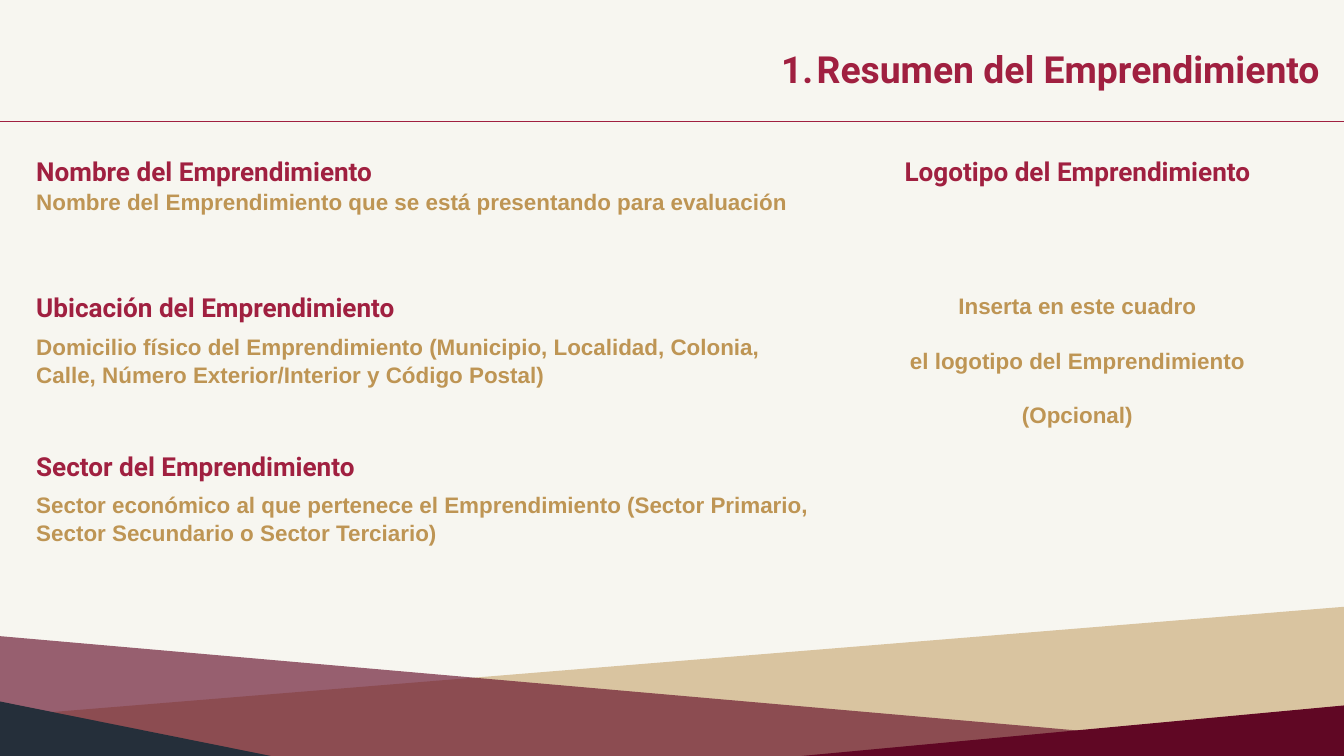
from lxml import etree
from pptx import Presentation
from pptx.dml.color import RGBColor
from pptx.enum.shapes import MSO_CONNECTOR
from pptx.enum.text import MSO_ANCHOR, PP_ALIGN
from pptx.oxml.ns import qn
from pptx.util import Cm, Pt

LEFT, CENTER, RIGHT = PP_ALIGN.LEFT, PP_ALIGN.CENTER, PP_ALIGN.RIGHT
TOP, MIDDLE = MSO_ANCHOR.TOP, MSO_ANCHOR.MIDDLE
STRAIGHT = MSO_CONNECTOR.STRAIGHT

CREAM = RGBColor(0xF7, 0xF6, 0xF0)
CRIMSON = RGBColor(0xA0, 0x20, 0x40)
GOLD = RGBColor(0xBE, 0x95, 0x54)
WINE = RGBColor(0x60, 0x07, 0x24)
NAVY = RGBColor(0x25, 0x2F, 0x3A)

SLIDE_WIDTH, SLIDE_HEIGHT = 50.8, 28.58
HEADING_WIDTH, HEADING_HEIGHT = 15.85, 1.24
HEADING = {"font": "Roboto", "size": 28, "color": CRIMSON}
BODY = {"font": "Arial", "size": 24, "color": GOLD}

FOOTER_HEIGHT = 5.64
# Fill, opacity in percent and corners in cm within the footer
RIBBONS = [
    (GOLD, 51, [(50.8, 0), (50.8, 5.3), (46.89, 5.64), (0, 5.64), (0, 4.14)]),
    (WINE, 100, [(30.3, 5.64), (50.8, 3.73), (50.8, 5.64)]),
    (WINE, 63, [(8.15, 5.64), (0, 4.92), (0, 1.11), (50.8, 5.56), (50.8, 5.64)]),
    (NAVY, 100, [(0, 5.64), (0, 3.58), (10.24, 5.64)]),
]

# Top of the field, offset and height of its description, heading, description
FIELDS = [
    (5.79, 1.25, 1.07, "Nombre del Emprendimiento",
     "Nombre del Emprendimiento que se está presentando para evaluación"),
    (10.92, 1.6, 2.08, "Ubicación del Emprendimiento",
     "Domicilio físico del Emprendimiento (Municipio, Localidad, Colonia, "
     "Calle, Número Exterior/Interior y Código Postal)"),
    (16.94, 1.55, 2.08, "Sector del Emprendimiento",
     "Sector económico al que pertenece el Emprendimiento (Sector Primario, "
     "Sector Secundario o Sector Terciario)"),
]


def add_text(slide, text, left, top, width, height, *, font, size, color,
             align=LEFT, anchor=TOP, gap=0):
    """Add bold text, one paragraph per line, with gap points between them."""
    box = slide.shapes.add_textbox(Cm(left), Cm(top), Cm(width), Cm(height))
    frame = box.text_frame
    frame.word_wrap = True
    frame.vertical_anchor = anchor
    frame.margin_left = frame.margin_right = frame.margin_bottom = 0
    frame.margin_top = Cm(0.04)
    frame.text = text
    for index, paragraph in enumerate(frame.paragraphs):
        paragraph.alignment = align
        paragraph.line_spacing = 1.04
        if index and gap:
            paragraph.space_before = Pt(gap)
        run_font = paragraph.runs[0].font
        run_font.name, run_font.size, run_font.bold = font, Pt(size), True
        run_font.color.rgb = color
    return box


def number_paragraph(paragraph, color):
    properties = paragraph._p.get_or_add_pPr()
    properties.set("marL", str(Cm(1.27)))
    properties.set("indent", str(Cm(-1.35)))
    bullet_color = etree.SubElement(properties, qn("a:buClr"))
    etree.SubElement(bullet_color, qn("a:srgbClr")).set("val", str(color))
    etree.SubElement(properties, qn("a:buAutoNum")).set("type", "arabicPeriod")


def add_footer(slide, left, top):
    for color, opacity, corners in RIBBONS:
        points = [(Cm(left + x), Cm(top + y)) for x, y in corners]
        builder = slide.shapes.build_freeform(*points[0])
        builder.add_line_segments(points[1:], close=True)
        ribbon = builder.convert_to_shape()
        ribbon.shadow.inherit = False
        ribbon.line.fill.background()
        ribbon.fill.solid()
        ribbon.fill.fore_color.rgb = color
        if opacity < 100:
            color_element = ribbon._element.spPr.find(
                f"{qn('a:solidFill')}/{qn('a:srgbClr')}")
            etree.SubElement(color_element, qn("a:alpha")).set("val", str(opacity * 1000))


def add_header(slide, left, top, width, height):
    title = add_text(slide, "Resumen del Emprendimiento", left + 22.5, top + 1.65,
                     27.38, 1.75, font="Roboto", size=40, color=CRIMSON, align=RIGHT)
    number_paragraph(title.text_frame.paragraphs[0], CRIMSON)
    bottom = Cm(top + height)
    rule = slide.shapes.add_connector(STRAIGHT, Cm(left), bottom, Cm(left + width), bottom)
    rule.line.color.rgb = CRIMSON
    rule.line.width = Pt(1)
    etree.SubElement(rule._element.spPr, qn("a:effectLst"))


def add_fields(slide, left, width):
    for top, offset, height, heading, description in FIELDS:
        add_text(slide, heading, left, top, HEADING_WIDTH, HEADING_HEIGHT, **HEADING)
        add_text(slide, description, left, top + offset, width, height, **BODY)


def add_logo_area(slide, left, top, width):
    add_text(slide, "Logotipo del Emprendimiento", left + (width - HEADING_WIDTH) / 2,
             top, HEADING_WIDTH, HEADING_HEIGHT, align=CENTER, **HEADING)
    add_text(slide, "Inserta en este cuadro\nel logotipo del Emprendimiento\n(Opcional)",
             left, top + 3.15, width, 9.27, align=CENTER, anchor=MIDDLE, gap=28.8, **BODY)


def main():
    presentation = Presentation()
    presentation.slide_width = Cm(SLIDE_WIDTH)
    presentation.slide_height = Cm(SLIDE_HEIGHT)
    slide = presentation.slides.add_slide(presentation.slide_layouts[6])
    slide.background.fill.solid()
    slide.background.fill.fore_color.rgb = CREAM
    add_footer(slide, 0, SLIDE_HEIGHT - FOOTER_HEIGHT)
    add_header(slide, 0, 0, SLIDE_WIDTH, 4.6)
    add_fields(slide, 1.37, 29.26)
    add_logo_area(slide, 31.98, 5.79, 17.48)
    presentation.save("out.pptx")


if __name__ == "__main__":
    main()
